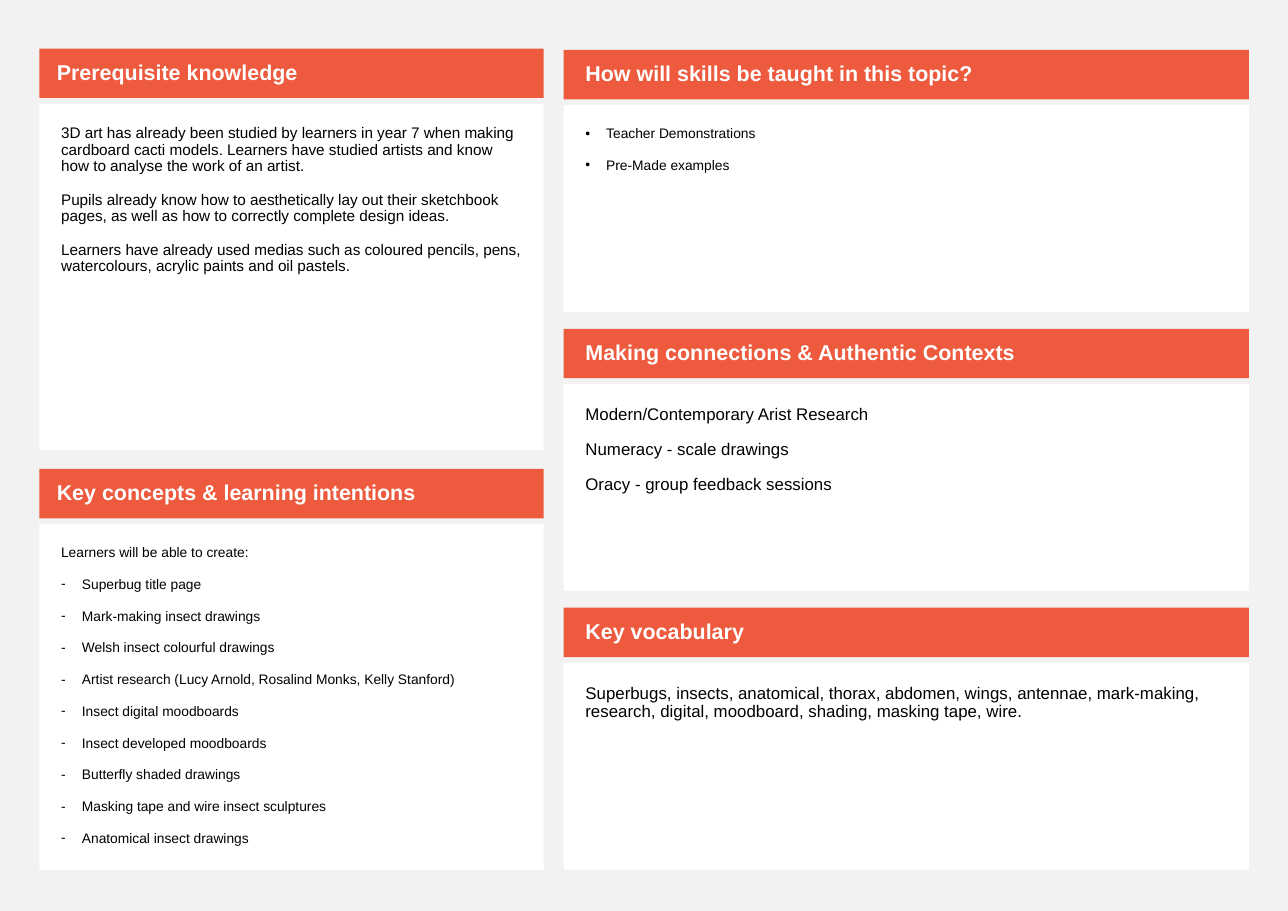
from lxml import etree
from pptx import Presentation
from pptx.dml.color import RGBColor
from pptx.enum.shapes import MSO_SHAPE
from pptx.enum.text import MSO_ANCHOR, PP_ALIGN
from pptx.oxml.ns import qn
from pptx.util import Cm, Pt

RECTANGLE = MSO_SHAPE.RECTANGLE
TOP, MIDDLE = MSO_ANCHOR.TOP, MSO_ANCHOR.MIDDLE
LEFT = PP_ALIGN.LEFT

CORAL = RGBColor(0xED, 0x5A, 0x3E)
WHITE = RGBColor(0xFF, 0xFF, 0xFF)
BLACK = RGBColor(0x00, 0x00, 0x00)
PALE_GREY = RGBColor(0xF2, 0xF2, 0xF2)

FONT = "Arial"
HEADING_HEIGHT = Cm(1.14)
BODY_OFFSET = Cm(1.27)
BODY_INSET = Cm(0.5)
BULLET_INDENT = Cm(0.48)

PREREQUISITES = [
    "3D art has already been studied by learners in year 7 when making cardboard cacti models. "
    "Learners have studied artists and know how to analyse the work of an artist.",
    "Pupils already know how to aesthetically lay out their sketchbook pages, as well as "
    "how to correctly complete design ideas.",
    "Learners have already used medias such as coloured "
    "pencils, pens, watercolours, acrylic paints and oil pastels.",
]
INTENTIONS = [
    "Learners will be able to create:",
    "Superbug title page",
    "Mark-making insect drawings",
    "Welsh insect colourful drawings",
    "Artist research (Lucy Arnold, Rosalind Monks, Kelly Stanford)",
    "Insect digital moodboards",
    "Insect developed moodboards",
    "Butterfly shaded drawings",
    "Masking tape and wire insect sculptures",
    "Anatomical insect drawings",
]
SKILLS = ["Teacher Demonstrations", "Pre-Made examples"]
CONNECTIONS = [
    "Modern/Contemporary Arist Research",
    "Numeracy - scale drawings",
    "Oracy - group feedback sessions",
]
VOCABULARY = [
    "Superbugs, insects, anatomical, thorax, abdomen, wings, antennae, mark-making, "
    "research, digital, moodboard, shading, masking tape, wire.",
]


def add_block(slide, box, fill, anchor, insets):
    block = slide.shapes.add_shape(RECTANGLE, *box)
    block.shadow.inherit = False
    block.fill.solid()
    block.fill.fore_color.rgb = fill
    block.line.fill.background()
    frame = block.text_frame
    frame.word_wrap = True
    frame.vertical_anchor = anchor
    frame.margin_left, frame.margin_top, frame.margin_right, frame.margin_bottom = insets
    return frame


def write_lines(frame, lines, size, color, bold=False):
    frame.text = "\n".join(lines)
    for paragraph in frame.paragraphs:
        paragraph.alignment = LEFT
        paragraph.line_spacing = 0.9
        paragraph.space_before = Pt(11)
        for run in paragraph.runs:
            run.font.name = FONT
            run.font.size = Pt(size)
            run.font.bold = bold
            run.font.color.rgb = color


def add_bullet(paragraph, mark):
    properties = paragraph._p.get_or_add_pPr()
    properties.set("marL", str(BULLET_INDENT))
    properties.set("indent", str(-BULLET_INDENT))
    etree.SubElement(properties, qn("a:buFont"), typeface=FONT)
    etree.SubElement(properties, qn("a:buChar"), char=mark)


def add_panel(slide, box, heading_inset, heading, lines, size, mark=None, intro_count=0):
    left, top, width, height = box
    title = add_block(slide, (left, top, width, HEADING_HEIGHT), CORAL, MIDDLE,
                      (heading_inset, Cm(0.13), Cm(0.25), Cm(0.13)))
    write_lines(title, [heading], 14, WHITE, bold=True)

    body = add_block(slide, (left, top + BODY_OFFSET, width, height - BODY_OFFSET),
                     WHITE, TOP, (BODY_INSET,) * 4)
    write_lines(body, lines, size, BLACK)
    if mark:
        for paragraph in body.paragraphs[intro_count:]:
            add_bullet(paragraph, mark)


def add_column(slide, box, pitch, panel_height, heading_inset, panels):
    left, top, width = box
    for row, panel in enumerate(panels):
        add_panel(slide, (left, top + row * pitch, width, panel_height), heading_inset, *panel)


def main():
    presentation = Presentation()
    presentation.slide_width = Cm(29.7)
    presentation.slide_height = Cm(21)
    slide = presentation.slides.add_slide(presentation.slide_layouts[6])
    slide.background.fill.solid()
    slide.background.fill.fore_color.rgb = PALE_GREY

    add_column(slide, (Cm(0.91), Cm(1.12), Cm(11.63)), Cm(9.69), Cm(9.25), Cm(0.4), [
        ("Prerequisite knowledge", PREREQUISITES, 10),
        ("Key concepts & learning intentions", INTENTIONS, 9, "-", 1),
    ])
    add_column(slide, (Cm(13), Cm(1.15), Cm(15.8)), Cm(6.43), Cm(6.04), BODY_INSET, [
        ("How will skills be taught in this topic?", SKILLS, 9, "•"),
        ("Making connections & Authentic Contexts", CONNECTIONS, 11),
        ("Key vocabulary", VOCABULARY, 11),
    ])
    presentation.save("out.pptx")


if __name__ == "__main__":
    main()
